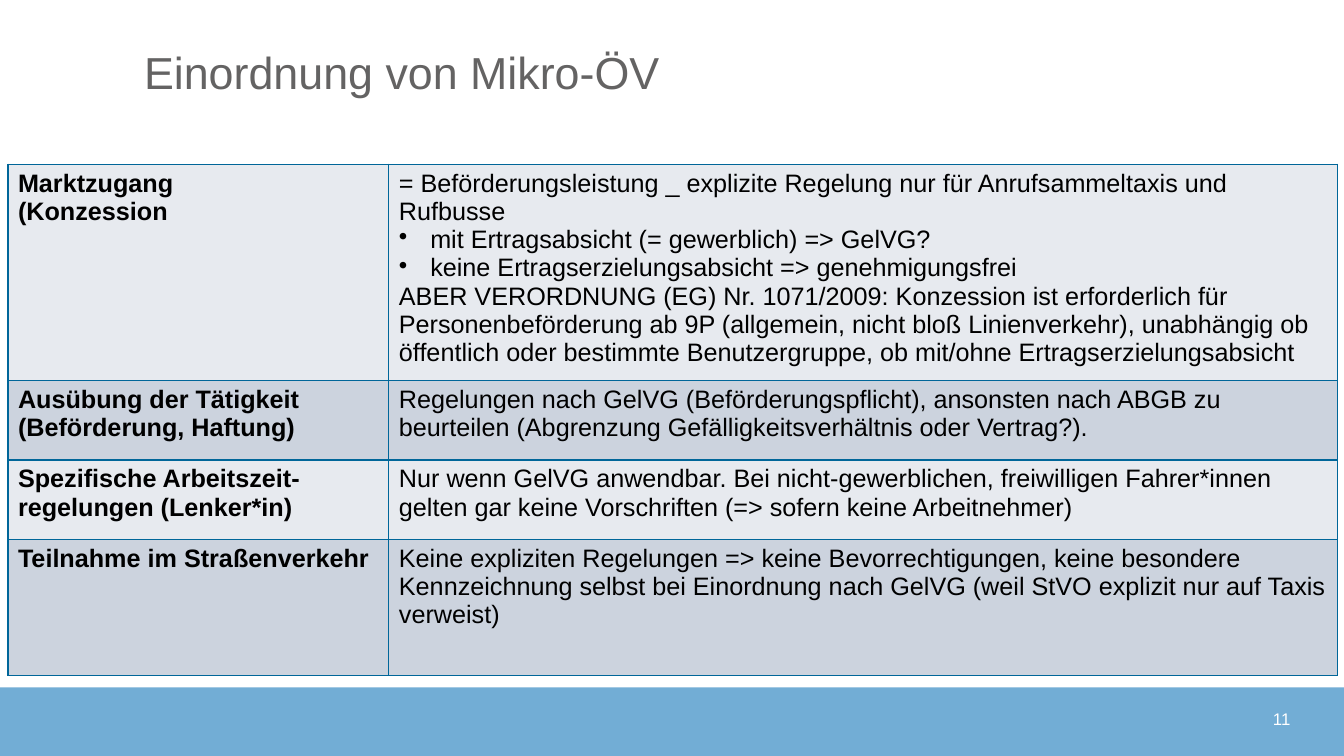
import pptx
import pptx.util
import pptx.dml.color
import pptx.enum.shapes
import pptx.enum.text
import pptx.oxml
import pptx.oxml.ns

Cm = pptx.util.Cm
Pt = pptx.util.Pt
RGBColor = pptx.dml.color.RGBColor
PP_ALIGN = pptx.enum.text.PP_ALIGN
MSO_ANCHOR = pptx.enum.text.MSO_ANCHOR

FOOTER_BLUE = RGBColor(0x72, 0xAD, 0xD5)
TITLE_GREY = RGBColor(0x64, 0x63, 0x63)
ROW_LIGHT = RGBColor(0xE7, 0xEA, 0xEF)
ROW_DARK = RGBColor(0xCC, 0xD3, 0xDE)
BORDER_BLUE = RGBColor(0x00, 0x66, 0x99)
BLACK = RGBColor(0, 0, 0)
WHITE = RGBColor(0xFF, 0xFF, 0xFF)

BULLET = "• "
COLUMN_WIDTHS = [9.6, 23.9]
TOPICS = [
    (5.44, ["Marktzugang", "(Konzession"], [
        "= Beförderungsleistung _ explizite Regelung nur für Anrufsammeltaxis und Rufbusse",
        "• mit Ertragsabsicht (= gewerblich) => GelVG?",
        "• keine Ertragserzielungsabsicht => genehmigungsfrei",
        "ABER VERORDNUNG (EG) Nr. 1071/2009: Konzession ist erforderlich für "
        "Personenbeförderung ab 9P (allgemein, nicht bloß Linienverkehr), unabhängig ob "
        "öffentlich oder bestimmte Benutzergruppe, ob mit/ohne Ertragserzielungsabsicht",
    ]),
    (2.01, ["Ausübung der Tätigkeit (Beförderung, Haftung)"], [
        "Regelungen nach GelVG (Beförderungspflicht), ansonsten nach ABGB zu "
        "beurteilen (Abgrenzung Gefälligkeitsverhältnis oder Vertrag?).",
    ]),
    (2.01, ["Spezifische Arbeitszeit-regelungen (Lenker*in)"], [
        "Nur wenn GelVG anwendbar. Bei nicht-gewerblichen, freiwilligen Fahrer*innen "
        "gelten gar keine Vorschriften (=> sofern keine Arbeitnehmer)",
    ]),
    (3.43, ["Teilnahme im Straßenverkehr"], [
        "Keine expliziten Regelungen => keine Bevorrechtigungen, keine besondere "
        "Kennzeichnung selbst bei Einordnung nach GelVG (weil StVO explizit nur auf Taxis "
        "verweist)",
    ]),
]


def add_run(paragraph, text, size, color, bold=False):
    run = paragraph.add_run()
    run.text = text
    run.font.name = "Arial"
    run.font.size = Pt(size)
    run.font.bold = bold
    run.font.color.rgb = color


def prepare_frame(frame, anchor):
    frame.margin_left = frame.margin_right = frame.margin_top = frame.margin_bottom = 0
    frame.word_wrap = True
    frame.auto_size = pptx.enum.text.MSO_AUTO_SIZE.NONE
    frame.vertical_anchor = anchor
    return frame.paragraphs[0]


presentation = pptx.Presentation()
presentation.slide_width = Cm(33.87)
presentation.slide_height = Cm(19.05)
slide = presentation.slides.add_slide(presentation.slide_layouts[5])

footer = slide.shapes.add_shape(
    pptx.enum.shapes.MSO_SHAPE.RECTANGLE, 0, Cm(17.32), Cm(33.87), Cm(1.73))
footer.shadow.inherit = False
footer.fill.solid()
footer.fill.fore_color.rgb = FOOTER_BLUE
footer.line.fill.background()

title = slide.shapes.title
title.left, title.top, title.width, title.height = Cm(3.63), Cm(1.45), Cm(25.8), Cm(1.04)
heading = prepare_frame(title.text_frame, MSO_ANCHOR.BOTTOM)
heading.alignment = PP_ALIGN.LEFT
heading.line_spacing = 0.9
add_run(heading, "Einordnung von Mikro-ÖV", 32, TITLE_GREY)

page_box = slide.shapes.add_textbox(Cm(30.23), Cm(17.73), Cm(2.29), Cm(0.79))
page_number = prepare_frame(page_box.text_frame, MSO_ANCHOR.MIDDLE)
page_number.alignment = PP_ALIGN.RIGHT
add_run(page_number, "11", 12, WHITE)

overview = slide.shapes.add_table(
    len(TOPICS), len(COLUMN_WIDTHS), Cm(0.2), Cm(4.14),
    Cm(sum(COLUMN_WIDTHS)), Cm(sum(topic[0] for topic in TOPICS))).table
overview.first_row = False
overview.horz_banding = False
for column, width in zip(overview.columns, COLUMN_WIDTHS):
    column.width = Cm(width)

for row_index, (height, topic, regulation) in enumerate(TOPICS):
    overview.rows[row_index].height = Cm(height)
    for column_index, lines in enumerate([topic, regulation]):
        cell = overview.cell(row_index, column_index)
        cell_properties = cell._tc.get_or_add_tcPr()
        for side in ["lnL", "lnR", "lnT", "lnB"]:
            cell_properties.append(pptx.oxml.parse_xml(
                f'<a:{side} {pptx.oxml.ns.nsdecls("a")} w="{Pt(1)}"><a:solidFill>'
                f'<a:srgbClr val="{BORDER_BLUE}"/></a:solidFill></a:{side}>'))
        cell.fill.solid()
        cell.fill.fore_color.rgb = ROW_DARK if row_index % 2 else ROW_LIGHT
        for line_index, line in enumerate(lines):
            frame = cell.text_frame
            paragraph = frame.add_paragraph() if line_index else frame.paragraphs[0]
            if line.startswith(BULLET):
                bullet_properties = paragraph._p.get_or_add_pPr()
                bullet_properties.set("marL", str(Cm(0.79)))
                bullet_properties.set("indent", str(-Cm(0.79)))
                bullet_properties.append(pptx.oxml.parse_xml(
                    f'<a:buChar {pptx.oxml.ns.nsdecls("a")} char="•"/>'))
            add_run(paragraph, line.removeprefix(BULLET), 18, BLACK, column_index == 0)

presentation.save("out.pptx")
